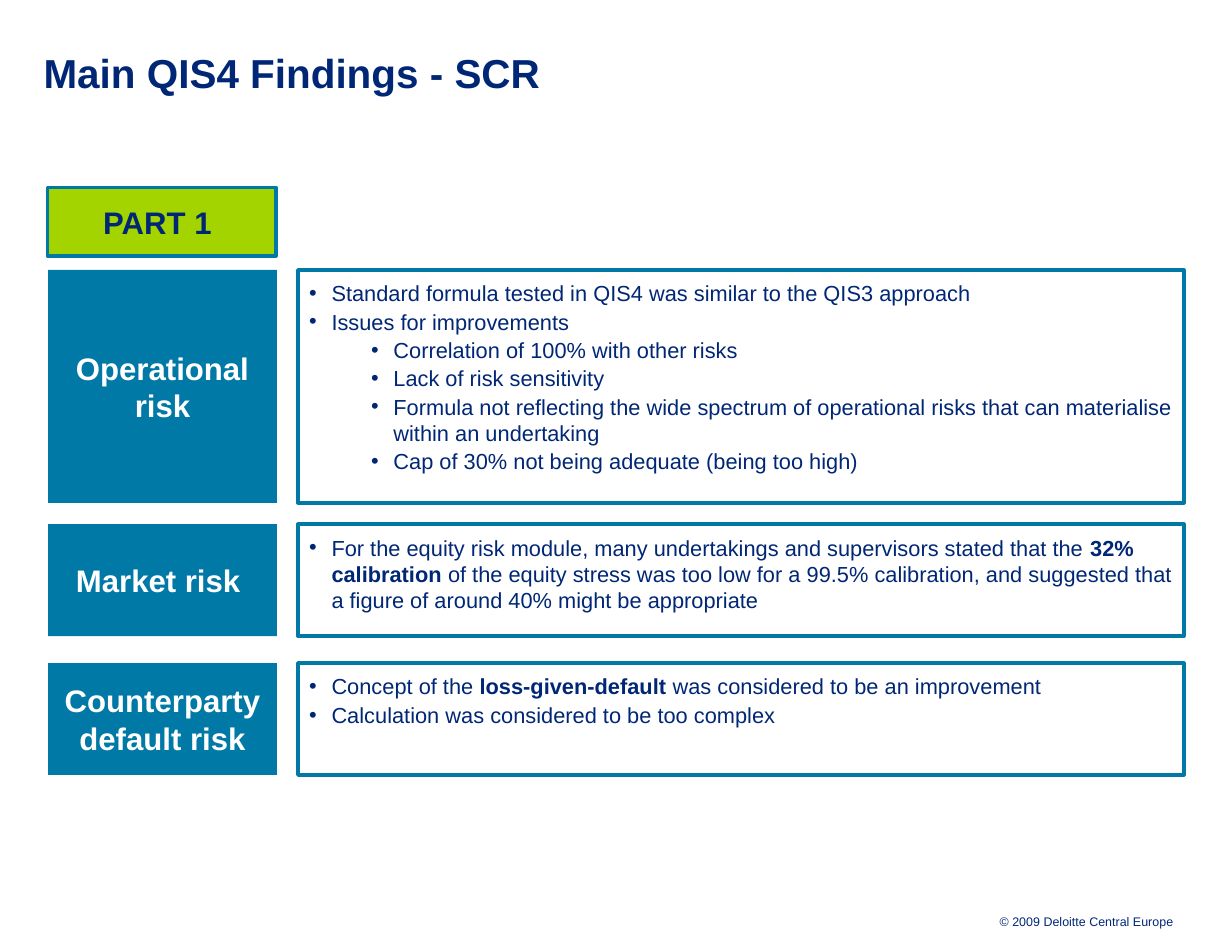
from dataclasses import dataclass

import pptx
import pptx.dml.color
import pptx.enum.shapes
import pptx.enum.text
import pptx.oxml
import pptx.oxml.ns
import pptx.shapes.autoshape
import pptx.slide
import pptx.text.text
import pptx.util

Pt = pptx.util.Pt
RGBColor = pptx.dml.color.RGBColor
Align = pptx.enum.text.PP_ALIGN
Anchor = pptx.enum.text.MSO_ANCHOR

NAVY = RGBColor(0x00, 0x27, 0x76)
BLUE = RGBColor(0x00, 0x79, 0xA6)
GREEN = RGBColor(0xA4, 0xD4, 0x00)
WHITE = RGBColor(0xFF, 0xFF, 0xFF)

LABEL_LEFT, LABEL_WIDTH = 31, 147
FINDINGS_LEFT, FINDINGS_WIDTH = 191.5, 569.5
BOX_INSET = 6.5
BULLET_HANG = 14.4
BULLET_INDENTS = (15.1, 54.9)


@dataclass(frozen=True)
class Bullet:
    """A finding; words between asterisks are bold."""
    text: str
    level: int = 0


@dataclass(frozen=True)
class RiskRow:
    label: str
    top: float
    height: float
    bullets: tuple[Bullet, ...]


RISK_ROWS = (
    RiskRow("Operational risk", 173.5, 149.75, (
        Bullet("Standard formula tested in QIS4 was similar to the QIS3 approach"),
        Bullet("Issues for improvements"),
        Bullet("Correlation of 100% with other risks", 1),
        Bullet("Lack of risk sensitivity", 1),
        Bullet("Formula not reflecting the wide spectrum of operational risks "
               "that can materialise within an undertaking", 1),
        Bullet("Cap of 30% not being adequate (being too high)", 1),
    )),
    RiskRow("Market risk ", 337, 72, (
        Bullet("For the equity risk module, many undertakings and supervisors stated "
               "that the *32% calibration *of the equity stress was too low for a 99.5% "
               "calibration, and suggested that a figure of around 40% might be appropriate"),
    )),
    RiskRow("Counterparty default risk", 426.25, 72, (
        Bullet("Concept of the *loss-given-default* was considered to be an improvement"),
        Bullet("Calculation was considered to be too complex"),
    )),
)


def write_text(paragraph: pptx.text.text._Paragraph, text: str, *, size: float,
               color: RGBColor = NAVY, bold: bool = False, align: Align = Align.LEFT,
               line_spacing: float | None = None, space_after: float = 0) -> None:
    """Write text into a paragraph; asterisks switch bold on and off."""
    paragraph.alignment = align
    paragraph.space_before = Pt(0)
    paragraph.space_after = Pt(space_after)
    if line_spacing is not None:
        paragraph.line_spacing = Pt(line_spacing)
    for index, part in enumerate(text.split("*")):
        run = paragraph.add_run()
        run.text = part
        run.font.name = "Arial"
        run.font.size = Pt(size)
        run.font.bold = bold or index % 2 == 1
        run.font.color.rgb = color


def set_frame(frame: pptx.text.text.TextFrame, inset: float, anchor: Anchor) -> None:
    frame.word_wrap = True
    frame.auto_size = pptx.enum.text.MSO_AUTO_SIZE.NONE
    frame.vertical_anchor = anchor
    frame.margin_left = frame.margin_right = Pt(inset)
    frame.margin_top = frame.margin_bottom = Pt(inset)


def add_box(slide: pptx.slide.Slide, left: float, top: float, width: float, height: float,
            fill: RGBColor, anchor: Anchor,
            outlined: bool) -> pptx.shapes.autoshape.Shape:
    box = slide.shapes.add_shape(pptx.enum.shapes.MSO_SHAPE.RECTANGLE,
                                 Pt(left), Pt(top), Pt(width), Pt(height))
    box.shadow.inherit = False
    box.fill.solid()
    box.fill.fore_color.rgb = fill
    if outlined:
        box.line.color.rgb = BLUE
        box.line.width = Pt(2.25)
    else:
        box.line.fill.background()
    set_frame(box.text_frame, BOX_INSET, anchor)
    return box


def add_label(slide: pptx.slide.Slide, text: str, left: float, top: float, height: float,
              fill: RGBColor, color: RGBColor, outlined: bool = False) -> None:
    box = add_box(slide, left, top, LABEL_WIDTH, height, fill, Anchor.MIDDLE, outlined)
    write_text(box.text_frame.paragraphs[0], text, size=20, color=color, bold=True,
               align=Align.CENTER, space_after=2)


def set_bullet(paragraph: pptx.text.text._Paragraph, level: int) -> None:
    properties = paragraph._p.get_or_add_pPr()
    properties.set("marL", str(Pt(BULLET_INDENTS[level])))
    properties.set("indent", str(-Pt(BULLET_HANG)))
    namespace = pptx.oxml.ns.nsdecls("a")
    for xml in (f'<a:buFont {namespace} typeface="Arial"/>',
                f'<a:buChar {namespace} char="•"/>'):
        properties.append(pptx.oxml.parse_xml(xml))


def add_risk_row(slide: pptx.slide.Slide, row: RiskRow) -> None:
    box = add_box(slide, FINDINGS_LEFT, row.top, FINDINGS_WIDTH, row.height,
                  WHITE, Anchor.TOP, outlined=True)
    frame = box.text_frame
    for index, bullet in enumerate(row.bullets):
        paragraph = frame.add_paragraph() if index else frame.paragraphs[0]
        paragraph.level = bullet.level
        set_bullet(paragraph, bullet.level)
        write_text(paragraph, bullet.text, size=14, space_after=1.4)
    add_label(slide, row.label, LABEL_LEFT, row.top, row.height, BLUE, WHITE)


def main() -> None:
    presentation = pptx.Presentation()
    presentation.slide_width = Pt(792)
    presentation.slide_height = Pt(612)
    slide = presentation.slides.add_slide(presentation.slide_layouts[5])

    title = slide.shapes.title
    title.left, title.top, title.width, title.height = Pt(28), Pt(28), Pt(729.5), Pt(56)
    set_frame(title.text_frame, 0, Anchor.TOP)
    write_text(title.text_frame.paragraphs[0], "Main QIS4 Findings - SCR",
               size=26, bold=True, line_spacing=34)

    add_label(slide, "PART 1 ", 30.5, 120.5, 44, GREEN, NAVY, outlined=True)
    for row in RISK_ROWS:
        add_risk_row(slide, row)

    footer = slide.shapes.add_textbox(Pt(554.5), Pt(585.5), Pt(200), Pt(13))
    set_frame(footer.text_frame, 0, Anchor.TOP)
    write_text(footer.text_frame.paragraphs[0], "© 2009 Deloitte Central Europe",
               size=8, align=Align.RIGHT, line_spacing=12)

    presentation.save("out.pptx")


if __name__ == "__main__":
    main()
